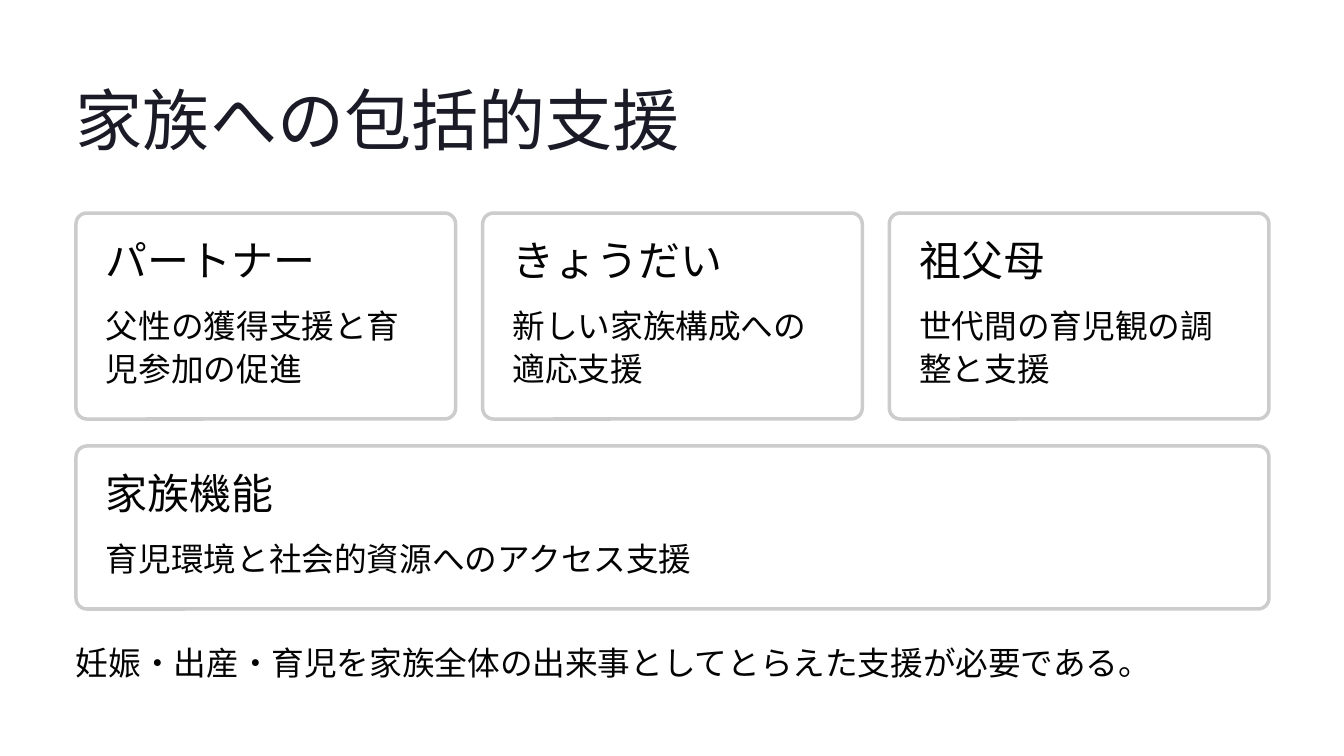
from collections import namedtuple

from lxml.etree import SubElement
from pptx import Presentation
from pptx.dml.color import RGBColor
from pptx.enum.shapes import MSO_SHAPE
from pptx.enum.text import MSO_ANCHOR, PP_ALIGN
from pptx.oxml.ns import qn
from pptx.util import Emu, Pt

PIXELS_PER_INCH = 84
HEADING_FONT = "Inter"
BODY_FONT = "Cabin"
TITLE_COLOR = "1B1B27"
TEXT_COLOR = "030303"
CARD_COLOR = "FFFFFF"
BORDER_COLOR = "CCCCCC"
CARD_RADIUS = 11
CARD_PADDING = 30
BODY_OFFSET = 89
GAP = 27

Box = namedtuple("Box", "left top width height")

FAMILY_CARDS = [
    ("パートナー", "父性の獲得支援と育児参加の促進"),
    ("きょうだい", "新しい家族構成への適応支援"),
    ("祖父母", "世代間の育児観の調整と支援"),
]


def px(length):
    return Emu(round(length * 914400 / PIXELS_PER_INCH))


def color(value):
    return RGBColor.from_string(value)


def add_text(page, box, text, font, size, spacing, ink=TEXT_COLOR, wrap=False):
    shape = page.shapes.add_textbox(*map(px, box))
    frame = shape.text_frame
    frame.margin_left = frame.margin_right = 0
    frame.margin_top = frame.margin_bottom = 0
    frame.vertical_anchor = MSO_ANCHOR.TOP
    frame.word_wrap = wrap
    para = frame.paragraphs[0]
    para.alignment = PP_ALIGN.LEFT
    para.line_spacing = Pt(spacing)
    span = para.add_run()
    span.text = text
    span.font.name = font
    span.font.size = Pt(size)
    span.font.color.rgb = color(ink)


def add_title(page, box, text):
    add_text(page, box, text, HEADING_FONT, 57.5, 72, TITLE_COLOR)


def add_body(page, box, text, wrap=False):
    add_text(page, box, text, BODY_FONT, 28, 37, wrap=wrap)


def add_card(page, box, heading, body, wrap=False):
    card = page.shapes.add_shape(MSO_SHAPE.ROUNDED_RECTANGLE, *map(px, box))
    card.adjustments[0] = round(CARD_RADIUS / box.height, 3)
    card.shadow.inherit = False
    card.fill.solid()
    card.fill.fore_color.rgb = color(CARD_COLOR)
    fill_color = card.fill._xPr.find(qn("a:solidFill"))[0]
    SubElement(fill_color, qn("a:alpha"), val="95000")
    card.line.color.rgb = color(BORDER_COLOR)
    card.line.width = Pt(3)

    left = box.left + CARD_PADDING
    width = box.width - 2 * CARD_PADDING
    heading_box = Box(left, box.top + CARD_PADDING, width, 42)
    body_height = box.height - BODY_OFFSET - CARD_PADDING
    body_box = Box(left, box.top + BODY_OFFSET, width, body_height)
    add_text(page, heading_box, heading, HEADING_FONT, 36, 36)
    add_body(page, body_box, body, wrap)


def add_card_row(page, box, cards):
    width = (box.width - GAP * (len(cards) - 1)) / len(cards)
    for index, (heading, body) in enumerate(cards):
        left = box.left + index * (width + GAP)
        add_card(page, Box(left, box.top, width, box.height), heading, body, wrap=True)


def add_family_support_slide(deck, box):
    page = deck.slides.add_slide(deck.slide_layouts[6])
    page.background.fill.solid()
    page.background.fill.fore_color.rgb = color("FFFFFF")

    add_title(page, Box(box.left, box.top, box.width, 85), "家族への包括的支援")
    row = Box(box.left, box.top + 138, box.width, 206)
    add_card_row(page, row, FAMILY_CARDS)
    wide = Box(box.left, row.top + row.height + GAP, box.width, 163)
    add_card(page, wide, "家族機能", "育児環境と社会的資源へのアクセス支援")
    closing = Box(box.left, wide.top + wide.height + 30, box.width, 43)
    add_body(page, closing, "妊娠・出産・育児を家族全体の出来事としてとらえた支援が必要である。")


def main():
    deck = Presentation()
    deck.slide_width = px(1344)
    deck.slide_height = px(756)
    add_family_support_slide(deck, Box(76, 75, 1193, 607))
    deck.save("out.pptx")


if __name__ == "__main__":
    main()
